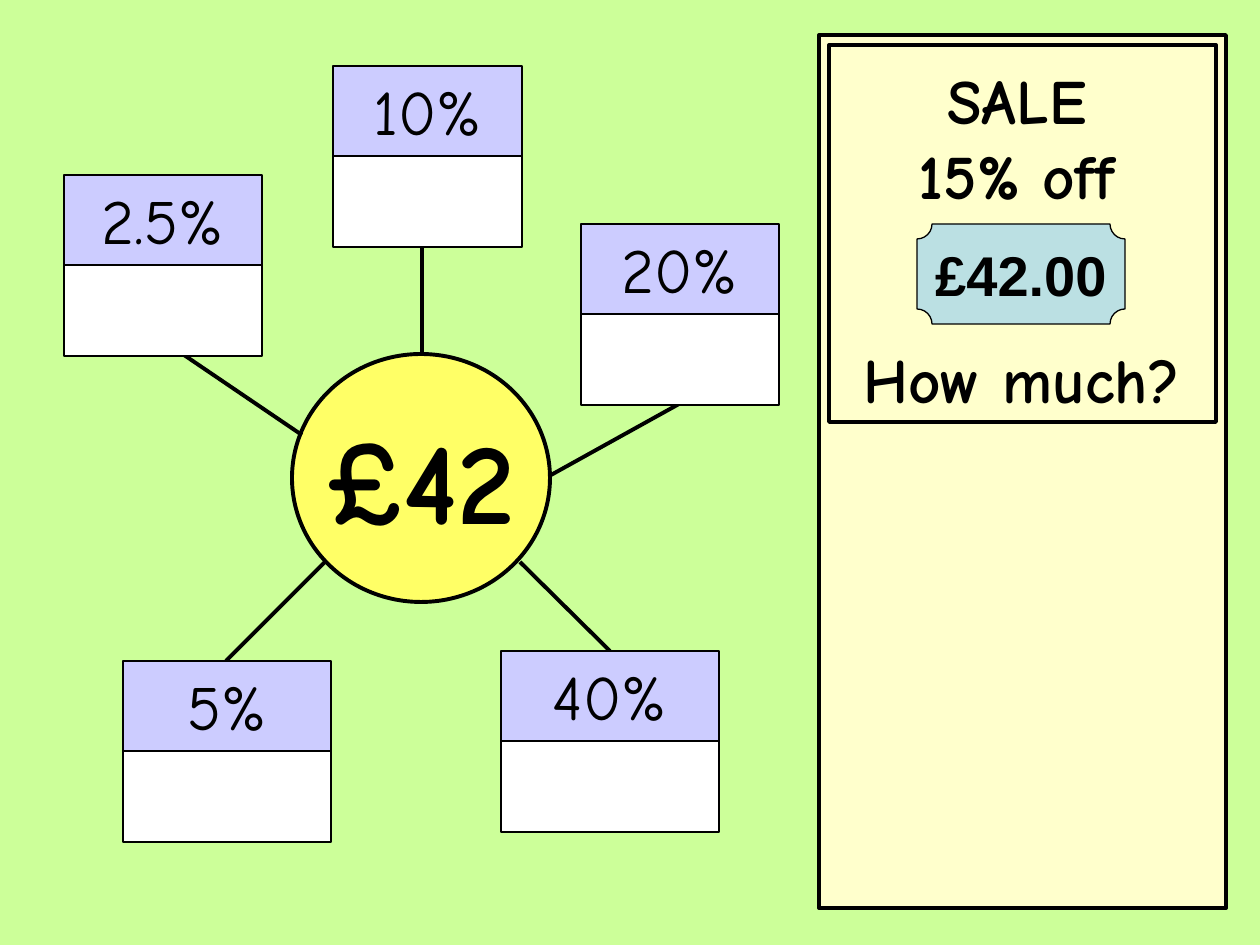
from dataclasses import dataclass
from typing import Optional

import pptx
import pptx.dml.color
import pptx.enum.shapes
import pptx.enum.text
import pptx.oxml.ns
import pptx.util
from lxml import etree

DPI = 126
CELL = 91   # height of a card's cell
STEP = 90   # from the top of the label to the top of the answer

Kind = pptx.enum.shapes.MSO_SHAPE
Anchor = pptx.enum.text.MSO_ANCHOR


@dataclass(frozen=True)
class Theme:
    page: str = "CCFF99"
    ink: str = "000000"
    hub: str = "FFFF66"
    label: str = "CCCCFF"
    blank: str = "FFFFFF"
    panel: str = "FFFFCC"
    ticket: str = "BBE0E3"
    hand: str = "Comic Neue"
    plain: str = "Arial"
    huge: int = 66
    body: int = 36
    price: int = 32
    thin: float = 0.75
    mid: float = 1.5
    thick: float = 2.25


@dataclass(frozen=True)
class Box:
    x: int
    y: int
    w: int
    h: int


@dataclass(frozen=True)
class Card:
    text: str
    x: int
    y: int
    w: int
    start: tuple[int, int]
    end: tuple[int, int]


THEME = Theme()
CARDS = [
    Card("10%", 333, 66, 189, (422, 355), (422, 246)),
    Card("5%", 123, 661, 208, (325, 562), (226, 661)),
    Card("20%", 581, 224, 198, (551, 475), (679, 404)),
    Card("40%", 501, 651, 218, (520, 562), (610, 651)),
    Card("2.5%", 64, 175, 198, (302, 435), (184, 355)),
]


def px(n: int) -> pptx.util.Emu:
    return pptx.util.Emu(round(n * 914400 / DPI))


def place(box: Box) -> list[pptx.util.Emu]:
    return [px(n) for n in (box.x, box.y, box.w, box.h)]


def tint(code: str) -> pptx.dml.color.RGBColor:
    return pptx.dml.color.RGBColor.from_string(code)


def write(shape, lines: list[str], size: int, bold: bool = True,
          font: str = THEME.hand, wrap: bool = True,
          anchor: Anchor = Anchor.TOP) -> None:
    frame = shape.text_frame
    frame.word_wrap = wrap
    frame.vertical_anchor = anchor
    for i, line in enumerate(lines):
        para = frame.add_paragraph() if i else frame.paragraphs[0]
        para.alignment = pptx.enum.text.PP_ALIGN.CENTER
        run = para.add_run()
        run.text = line
        run.font.name = font
        run.font.size = pptx.util.Pt(size)
        run.font.bold = bold
        run.font.color.rgb = tint(THEME.ink)


def draw(slide, kind: Kind, box: Box, fill: Optional[str], width: float):
    shape = slide.shapes.add_shape(kind, *place(box))
    shape.shadow.inherit = False
    if fill is None:
        shape.fill.background()
    else:
        shape.fill.solid()
        shape.fill.fore_color.rgb = tint(fill)
    shape.line.color.rgb = tint(THEME.ink)
    shape.line.width = pptx.util.Pt(width)
    return shape


def note(slide, box: Box, lines: list[str]) -> None:
    write(slide.shapes.add_textbox(*place(box)), lines, THEME.body)


def link(slide, start: tuple[int, int], end: tuple[int, int]) -> None:
    line = slide.shapes.add_connector(
        pptx.enum.shapes.MSO_CONNECTOR.STRAIGHT,
        *[px(n) for n in start + end])
    line.line.color.rgb = tint(THEME.ink)
    line.line.width = pptx.util.Pt(THEME.thick)
    etree.SubElement(line._element.spPr, pptx.oxml.ns.qn("a:effectLst"))


def add_card(slide, card: Card) -> None:
    """Draw a percentage over its empty answer cell, joined to the hub."""
    link(slide, card.start, card.end)
    top = draw(slide, Kind.RECTANGLE, Box(card.x, card.y, card.w, CELL),
               THEME.label, THEME.mid)
    write(top, [card.text], THEME.body, bold=False)
    draw(slide, Kind.RECTANGLE, Box(card.x, card.y + STEP, card.w, CELL),
         THEME.blank, THEME.mid)


def add_sale(slide) -> None:
    draw(slide, Kind.RECTANGLE, Box(819, 35, 407, 873),
         THEME.panel, THEME.thick)
    note(slide, Box(858, 55, 318, 164), ["SALE", "15% off"])
    ticket = draw(slide, Kind.PLAQUE, Box(917, 224, 208, 100),
                  THEME.ticket, THEME.thin)
    ticket.adjustments[0] = 0.15
    write(ticket, ["£42.00"], THEME.price, font=THEME.plain,
          wrap=False, anchor=Anchor.MIDDLE)
    note(slide, Box(838, 334, 367, 88), ["How much?"])
    draw(slide, Kind.RECTANGLE, Box(829, 45, 387, 377), None, THEME.thick)


def main() -> None:
    deck = pptx.Presentation()
    deck.slide_width, deck.slide_height = px(1260), px(945)
    slide = deck.slides.add_slide(deck.slide_layouts[6])
    slide.background.fill.solid()
    slide.background.fill.fore_color.rgb = tint(THEME.page)

    hub = draw(slide, Kind.OVAL, Box(292, 354, 258, 248),
               THEME.hub, THEME.thick)
    write(hub, ["£42"], THEME.huge, wrap=False, anchor=Anchor.MIDDLE)
    for card in CARDS:
        add_card(slide, card)
    add_sale(slide)
    deck.save("out.pptx")


if __name__ == "__main__":
    main()
